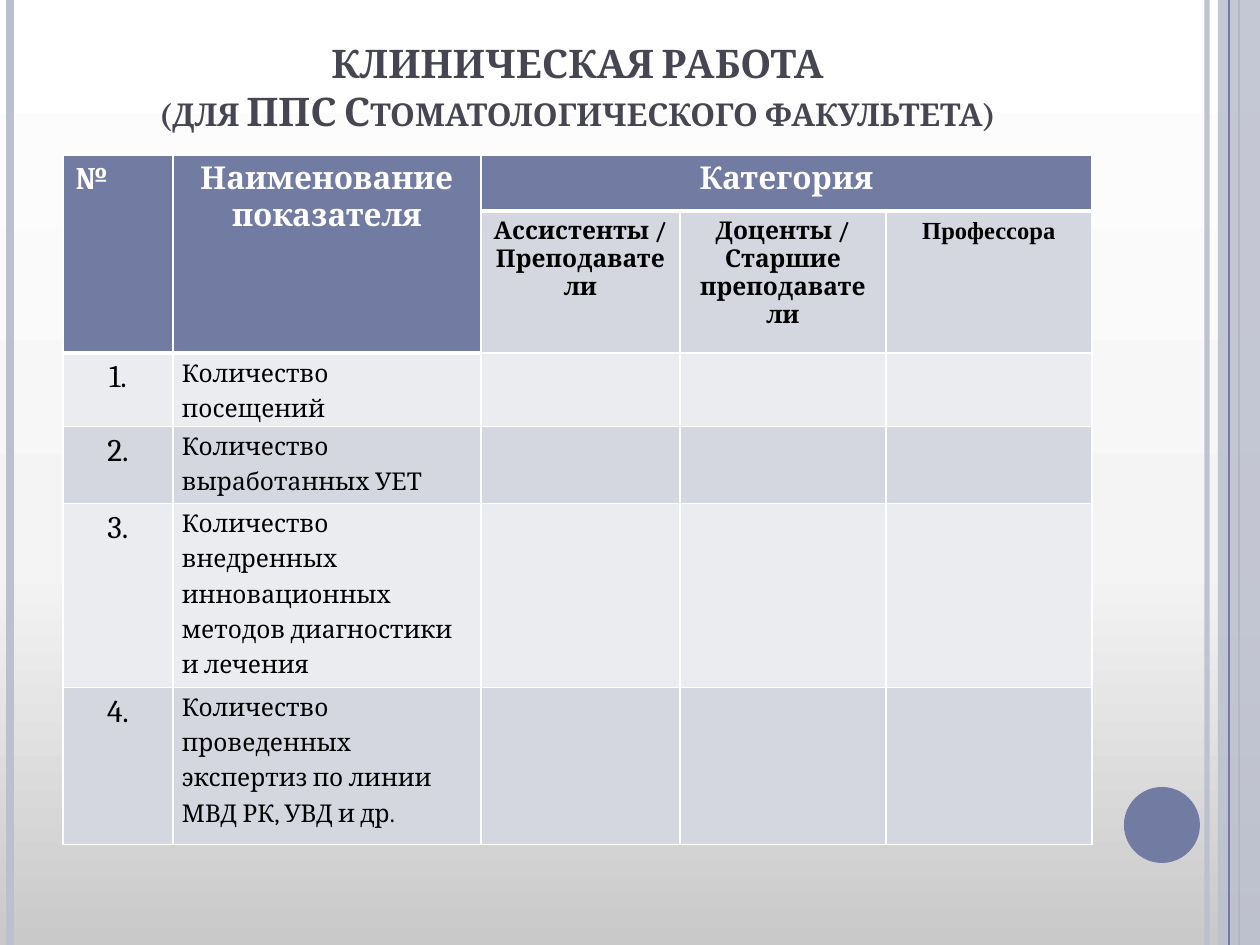
"""Build the slide with the clinical work indicator table."""
from copy import deepcopy

from lxml import etree
from pptx import Presentation
from pptx import util as u
from pptx.dml.color import RGBColor
from pptx.enum import shapes, text
from pptx.oxml.ns import qn

COLORS = {
    "accent": "727CA3", "stripe": "BCBFCE", "title": "464653",
    "white": "FFFFFF", "black": "000000", "dark_band": "D5D7E0",
    "light_band": "EBECF0", "bg_bottom": "C9C9C9", "bg_middle": "F4F4F4",
}
COLUMNS = [110, 308, 199, 206, 206]
ROWS = [56, 142, 70, 77, 176, 157]
CATEGORIES = [
    ("Ассистенты / Преподаватели", {}),
    ("Доценты / Старшие преподаватели", {}),
    ("Профессора", {"font": "Times New Roman", "spacing": 1.25}),
]
INDICATORS = [
    "Количество посещений",
    "Количество выработанных УЕТ",
    "Количество внедренных инновационных методов диагностики и лечения",
    "Количество проведенных экспертиз по линии МВД РК, УВД и др.",
]


def px(length):
    return u.Emu(round(length * 914400 / 126))


def rgb(name):
    return RGBColor.from_string(COLORS[name])


def write(frame, content, size=18, font="Cambria", color="black", bold=False,
          align=text.PP_ALIGN.CENTER, spacing=None, small_caps=False):
    paragraph = frame.paragraphs[0]
    paragraph.text = content
    paragraph.alignment = align
    if spacing:
        paragraph.line_spacing = spacing
    for run in paragraph.runs:
        run.font.size = u.Pt(size)
        run.font.name = font
        run.font.bold = bold
        run.font.color.rgb = rgb(color)
        if small_caps:
            run.font._element.set("cap", "small")


def set_alpha(element, percent):
    color = next(element.iter(qn("a:srgbClr")))
    etree.SubElement(color, qn("a:alpha")).set("val", str(percent * 1000))


def paint_background(slide):
    fill = slide.background.fill
    fill.gradient()
    fill.gradient_angle = 90
    stop_list = next(slide.element.iter(qn("a:gsLst")))
    stop_list.append(deepcopy(stop_list[0]))
    stops = [(0, "bg_bottom"), (0.4, "bg_middle"), (1, "white")]
    for stop, (position, color) in zip(fill.gradient_stops, stops):
        stop.position = position
        stop.color.rgb = rgb(color)


def add_stripe(slide, x, color, width, alpha=None):
    stripe = slide.shapes.add_connector(
        shapes.MSO_CONNECTOR.STRAIGHT, px(x), 0, px(x), px(945))
    stripe.line.color.rgb = rgb(color)
    stripe.line.width = u.Pt(width)
    properties = stripe._element.spPr
    if alpha:
        set_alpha(properties, alpha)
    etree.SubElement(properties, qn("a:effectLst"))


def add_ornament(slide, kind, box, color, alpha=None):
    ornament = slide.shapes.add_shape(kind, *map(px, box))
    ornament.shadow.inherit = False
    ornament.fill.solid()
    ornament.fill.fore_color.rgb = rgb(color)
    ornament.line.fill.background()
    if alpha:
        set_alpha(ornament._element.spPr, alpha)


def add_title(slide):
    title = slide.shapes.add_textbox(px(63), px(38), px(1029), px(157))
    frame = title.text_frame
    frame.word_wrap = True
    frame.vertical_anchor = text.MSO_ANCHOR.BOTTOM
    frame.margin_bottom = px(61)
    write(frame, "КЛИНИЧЕСКАЯ РАБОТА\v(для ППС Стоматологического факультета)",
          size=22.5, color="title", bold=True, small_caps=True)


def style_cell(cell, color, bottom=1):
    properties = cell._tc.get_or_add_tcPr()
    for side, width in (("L", 1), ("R", 1), ("T", 1), ("B", bottom)):
        border = etree.SubElement(properties, qn(f"a:ln{side}"), w=str(u.Pt(width)))
        fill = etree.SubElement(border, qn("a:solidFill"))
        etree.SubElement(fill, qn("a:srgbClr"), val=COLORS["white"])
    cell.fill.solid()
    cell.fill.fore_color.rgb = rgb(color)


def tighten(cell):
    cell.margin_left = cell.margin_right = px(9)
    cell.margin_top = cell.margin_bottom = 0


def fill_header(table):
    for column, (heading, align) in enumerate([
            ("№", text.PP_ALIGN.LEFT),
            ("Наименование показателя", text.PP_ALIGN.CENTER),
            ("Категория", text.PP_ALIGN.CENTER)]):
        cell = table.cell(0, column)
        cell.merge(table.cell(0, 4) if column == 2 else table.cell(1, column))
        write(cell.text_frame, heading, color="white", bold=True, align=align)
    for column, (category, look) in enumerate(CATEGORIES, start=2):
        cell = table.cell(1, column)
        write(cell.text_frame, category, size=14, bold=True, **look)
        if look:
            tighten(cell)


def fill_indicators(table):
    for number, indicator in enumerate(INDICATORS, start=1):
        write(table.cell(number + 1, 0).text_frame, f"{number}.")
        cell = table.cell(number + 1, 1)
        tighten(cell)
        write(cell.text_frame, indicator, size=14, spacing=1.25,
              align=text.PP_ALIGN.LEFT)


def add_indicator_table(slide):
    table = slide.shapes.add_table(
        len(ROWS), len(COLUMNS), px(63), px(155), px(sum(COLUMNS)), px(sum(ROWS))).table
    for column, width in zip(table.columns, COLUMNS):
        column.width = px(width)
    for index, (row, height) in enumerate(zip(table.rows, ROWS)):
        row.height = px(height)
        for column, cell in enumerate(row.cells):
            heading = index == 0 or (index == 1 and column < 2)
            band = "dark_band" if index % 2 else "light_band"
            style_cell(cell, "accent" if heading else band, 3 if heading else 1)
    fill_header(table)
    fill_indicators(table)


def main():
    deck = Presentation()
    deck.slide_width, deck.slide_height = px(1260), px(945)
    slide = deck.slides.add_slide(deck.slide_layouts[6])
    paint_background(slide)
    add_stripe(slide, 1207, "stripe", 3, alpha=93)
    add_stripe(slide, 10, "stripe", 4.5)
    add_stripe(slide, 1239, "accent", 1.5)
    add_ornament(slide, shapes.MSO_SHAPE.RECTANGLE, (1218, 0, 42, 945), "stripe", alpha=87)
    add_stripe(slide, 1229, "accent", 0.75)
    add_ornament(slide, shapes.MSO_SHAPE.OVAL, (1124, 787, 76, 76), "accent")
    add_title(slide)
    add_indicator_table(slide)
    deck.save("out.pptx")


if __name__ == "__main__":
    main()
